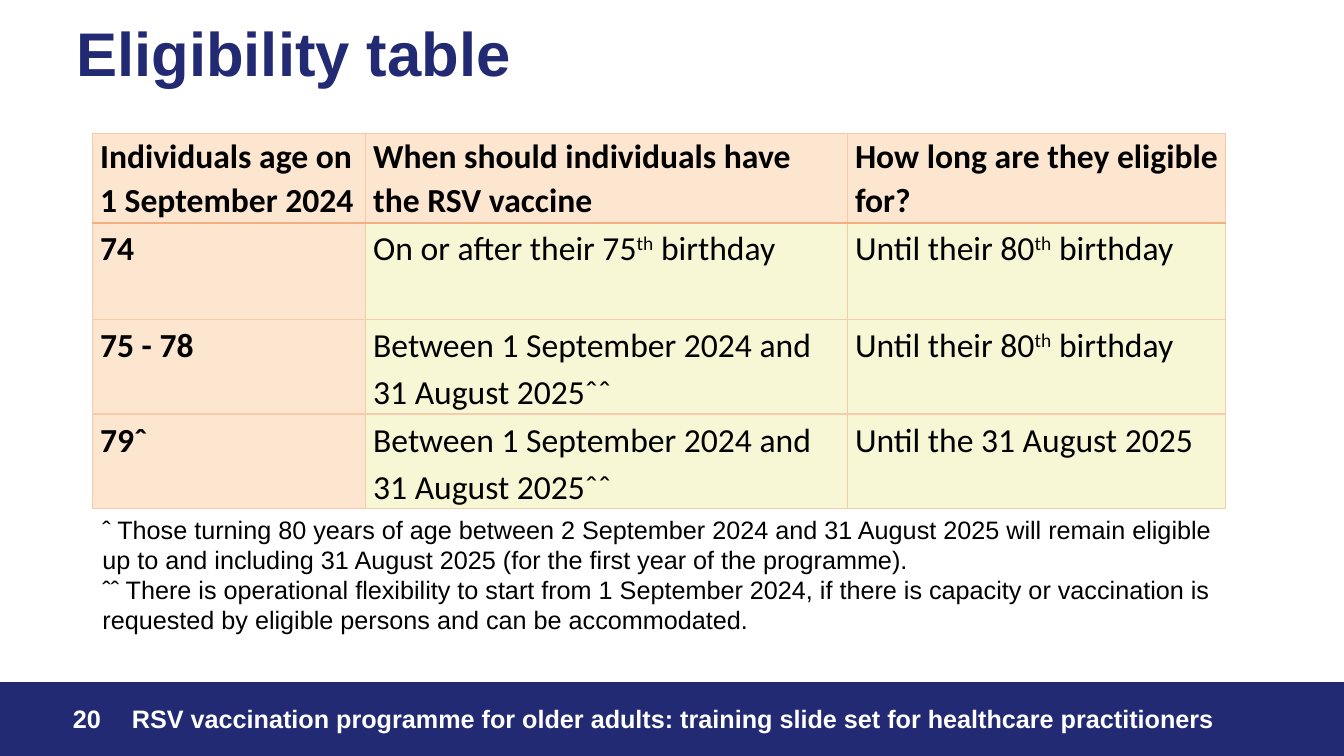
from pptx import Presentation, util as u
from pptx.dml.color import RGBColor
from pptx.enum import shapes, text
from pptx.oxml import parse_xml
from pptx.oxml.ns import nsdecls

# Content: "^" splits off the ordinal suffix that is raised
TITLE = "Eligibility table"
PAGE_NUMBER = "20"
FOOTER = "RSV vaccination programme for older adults: training slide set for healthcare practitioners"
NOTES = [
    "ˆ Those turning 80 years of age between 2 September 2024 and 31 August 2025 will remain eligible "
    "up to and including 31 August 2025 (for the first year of the programme).",
    "ˆˆ There is operational flexibility to start from 1 September 2024, if there is capacity or "
    "vaccination is requested by eligible persons and can be accommodated.",
]
CATCH_UP = "Between 1 September 2024 and 31 August 2025ˆˆ"
UNTIL_80 = "Until their 80^th^ birthday"
ROWS = [
    ("Individuals age on 1 September 2024", "When should individuals have the RSV vaccine",
     "How long are they eligible for?"),
    ("74", "On or after their 75^th^ birthday", UNTIL_80),
    ("75 - 78", CATCH_UP, UNTIL_80),
    ("79ˆ", CATCH_UP, "Until the 31 August 2025"),
]

# Formats, lengths in points
NAVY = RGBColor(0x21, 0x2A, 0x73)
WHITE = RGBColor(0xFF, 0xFF, 0xFF)
BLACK = RGBColor(0, 0, 0)
PEACH = RGBColor(0xFD, 0xE6, 0xCF)
CREAM = RGBColor(0xF7, 0xF6, 0xD5)
BORDER = RGBColor(0xF7, 0xCA, 0xAC)
HEADER_RULE = RGBColor(0xF4, 0xB0, 0x83)

SLIDE_WIDTH, SLIDE_HEIGHT = 960, 540
BAND_TOP = 487.4
TABLE_LEFT, TABLE_TOP = 66.1, 95.6
COLUMN_WIDTHS = [195.1, 344.2, 270]
ROW_HEIGHTS = [63.4, 69.1, 67.7, 67.7]

TITLE_FONT = {"name": "Arial", "size": u.Pt(44), "bold": True}
FOOTER_FONT = {"name": "Arial", "size": u.Pt(18), "bold": True}
NOTE_FONT = {"name": "Arial", "size": u.Pt(18), "bold": False}
CELL_FONT = {"name": "Calibri", "size": u.Pt(24)}


def add_run(paragraph, words, font_format, color):
    run = paragraph.add_run()
    run.text = words
    for name, value in font_format.items():
        setattr(run.font, name, value)
    run.font.color.rgb = color
    return run


def place(shape, left, top, width, height):
    shape.left, shape.top, shape.width, shape.height = map(u.Pt, (left, top, width, height))


def add_text(slide, box, paragraphs, font_format, color, alignment=text.PP_ALIGN.LEFT):
    shape = slide.shapes.add_textbox(*map(u.Pt, box))
    frame = shape.text_frame
    frame.word_wrap = True
    for index, words in enumerate(paragraphs):
        paragraph = frame.add_paragraph() if index else frame.paragraphs[0]
        paragraph.alignment = alignment
        add_run(paragraph, words, font_format, color)


def set_borders(cell, row):
    rule_edge = {0: "B", 1: "T"}.get(row)
    for edge in "LRTB":
        color, width = (HEADER_RULE, 1.5) if edge == rule_edge else (BORDER, 1)
        cell._tc.get_or_add_tcPr().append(parse_xml(
            f'<a:ln{edge} {nsdecls("a")} w="{u.Pt(width)}"><a:solidFill>'
            f'<a:srgbClr val="{color}"/></a:solidFill></a:ln{edge}>'))


def fill_cell(cell, words, row, column):
    set_borders(cell, row)
    heading = row == 0 or column == 0
    cell.fill.solid()
    cell.fill.fore_color.rgb = PEACH if heading else CREAM
    cell.margin_left = cell.margin_right = u.Pt(5.4)
    cell.margin_top = cell.margin_bottom = 0
    paragraph = cell.text_frame.paragraphs[0]
    paragraph.line_spacing = 1.07 if row == 0 else 1.15
    paragraph.space_after = u.Pt(8)
    for index, part in enumerate(words.split("^")):
        run = add_run(paragraph, part, {**CELL_FONT, "bold": heading}, BLACK)
        if index % 2:
            run._r.get_or_add_rPr().set("baseline", "30000")


def main():
    presentation = Presentation()
    presentation.slide_width, presentation.slide_height = u.Pt(SLIDE_WIDTH), u.Pt(SLIDE_HEIGHT)
    slide = presentation.slides.add_slide(presentation.slide_layouts[5])

    # Title
    title = slide.shapes.title
    place(title, 47.5, 10.8, 828, 59)
    title.text_frame.vertical_anchor = text.MSO_ANCHOR.MIDDLE
    paragraph = title.text_frame.paragraphs[0]
    paragraph.alignment = text.PP_ALIGN.LEFT
    paragraph.line_spacing = 0.9
    add_run(paragraph, TITLE, TITLE_FONT, NAVY)

    # Footer band with page number
    band = slide.shapes.add_shape(shapes.MSO_SHAPE.RECTANGLE, 0, u.Pt(BAND_TOP),
                                  u.Pt(SLIDE_WIDTH), u.Pt(SLIDE_HEIGHT - BAND_TOP))
    band.shadow.inherit = False
    band.fill.solid()
    band.fill.fore_color.rgb = band.line.color.rgb = NAVY
    band.line.width = u.Pt(1)
    add_text(slide, (0, 499, 79.2, 28.8), [PAGE_NUMBER], FOOTER_FONT, WHITE, text.PP_ALIGN.RIGHT)
    add_text(slide, (87.1, 499, 807, 28.8), [FOOTER], FOOTER_FONT, WHITE)

    # Eligibility table
    table = slide.shapes.add_table(
        len(ROWS), len(COLUMN_WIDTHS), u.Pt(TABLE_LEFT), u.Pt(TABLE_TOP),
        u.Pt(sum(COLUMN_WIDTHS)), u.Pt(sum(ROW_HEIGHTS))).table
    table.first_row = table.horz_banding = False
    for column, width in zip(table.columns, COLUMN_WIDTHS):
        column.width = u.Pt(width)
    for row, (height, cells) in enumerate(zip(ROW_HEIGHTS, ROWS)):
        table.rows[row].height = u.Pt(height)
        for column, words in enumerate(cells):
            fill_cell(table.cell(row, column), words, row, column)

    # Notes under the table
    notes_top = TABLE_TOP + sum(ROW_HEIGHTS)
    add_text(slide, (TABLE_LEFT, notes_top, 828, 94.3), NOTES, NOTE_FONT, BLACK)

    presentation.save("out.pptx")


if __name__ == "__main__":
    main()
